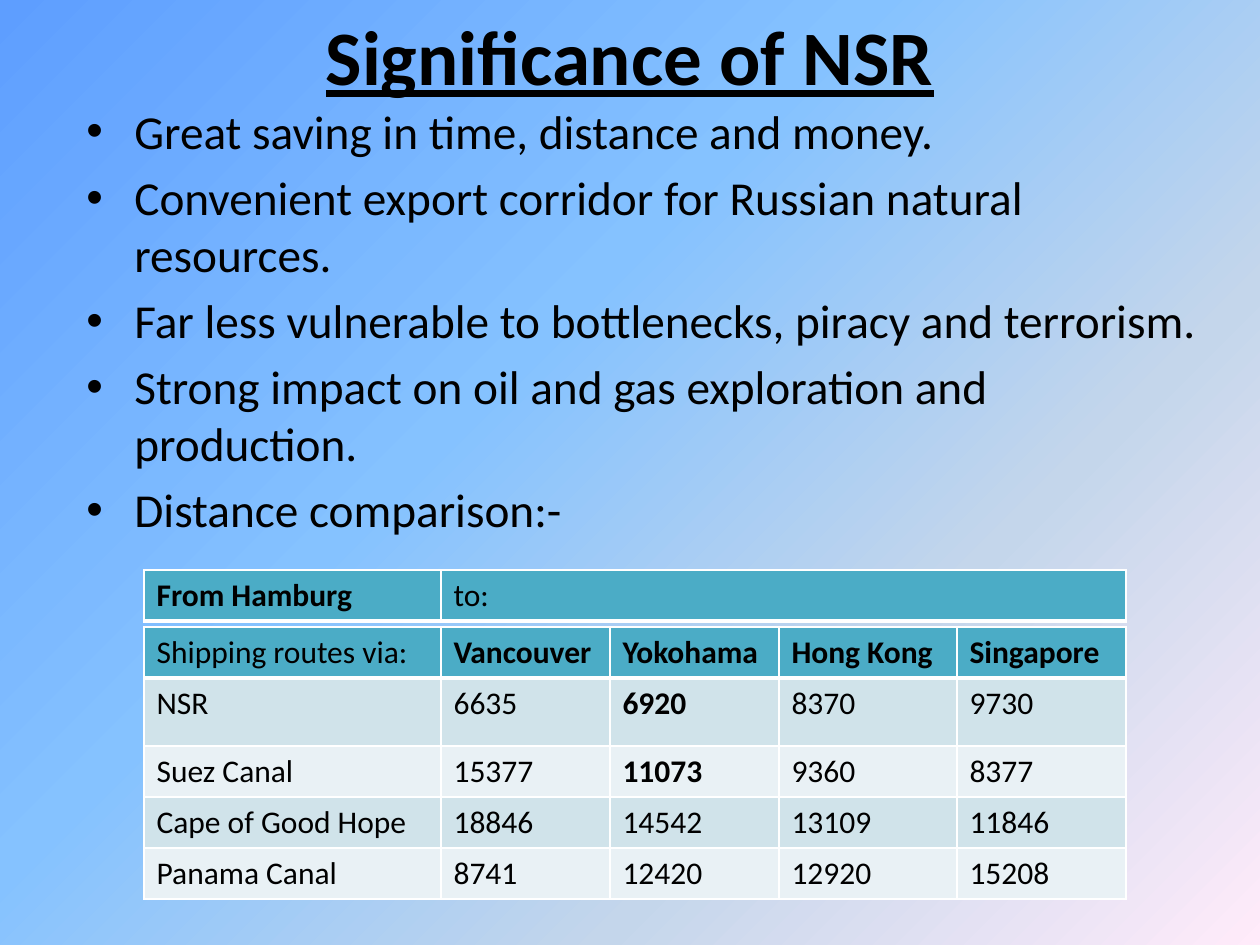
from pptx import Presentation
from pptx.dml.color import RGBColor
from pptx.enum.text import MSO_ANCHOR, PP_ALIGN
from pptx.oxml import parse_xml
from pptx.oxml.ns import nsdecls
from pptx.util import Pt

MIDDLE, TOP = MSO_ANCHOR.MIDDLE, MSO_ANCHOR.TOP
CENTER, LEFT = PP_ALIGN.CENTER, PP_ALIGN.LEFT

TITLE = "Significance of NSR"
POINTS = [
    "Great saving in time, distance and money.",
    "Convenient export corridor for Russian natural resources.",
    "Far less vulnerable to bottlenecks,\u00a0piracy and terrorism.",
    "Strong impact on oil and gas exploration and production.",
    "Distance comparison:-",
]
FROM = [["From Hamburg", "to:"]]
ROUTES = [
    ["Shipping routes via:", "Vancouver", "Yokohama", "Hong Kong", "Singapore"],
    ["NSR", "6635", "6920", "8370", "9730"],
    ["Suez Canal", "15377", "11073", "9360", "8377"],
    ["Cape of Good Hope", "18846", "14542", "13109", "11846"],
    ["Panama Canal", "8741", "12420", "12920", "15208"],
]
STRONG = {"From Hamburg", *ROUTES[0][1:], "6920", "11073"}
STOPS = [(0, "5E9EFF"), (40, "85C2FF"), (70, "C4D6EB"), (100, "FFEBFA")]
HEAD, BANDS = "4BACC6", ("E9F1F5", "D0E3EA")
COLS = [297, 169, 169, 178, 169]
ROWS = [51, 68, 51, 51, 51]
INDENT = 48
FONT = {"name": "Calibri", "bold": False, "underline": False}


def px(n):
    return round(n * 914400 / 126)


def color(code):
    return RGBColor.from_string(code)


def write(para, text, **form):
    run = para.add_run()
    run.text = text
    for key, val in {**FONT, **form}.items():
        setattr(run.font, key, val)
    run.font.color.rgb = color("000000")


def add_box(slide, spot, anchor):
    frame = slide.shapes.add_textbox(*map(px, spot)).text_frame
    frame.word_wrap = True
    frame.vertical_anchor = anchor
    return frame


def add_bullet(para):
    props = para._p.get_or_add_pPr()
    props.set("marL", str(px(INDENT)))
    props.set("indent", str(-px(INDENT)))
    props.append(parse_xml(f'<a:buFont {nsdecls("a")} typeface="Arial"/>'))
    props.append(parse_xml(f'<a:buChar {nsdecls("a")} char="•"/>'))


def add_edges(cell, base):
    props = cell._tc.get_or_add_tcPr()
    for spot, (side, width) in enumerate(zip("LRTB", (1, 1, 1, base))):
        props.insert(spot, parse_xml(
            f'<a:ln{side} {nsdecls("a")} w="{Pt(width)}"><a:solidFill>'
            f'<a:srgbClr val="FFFFFF"/></a:solidFill></a:ln{side}>'))


def add_grid(slide, data, left, top, cols, rows):
    spot = map(px, (left, top, sum(cols), sum(rows)))
    table = slide.shapes.add_table(len(rows), len(cols), *spot).table
    for col, width in zip(table.columns, cols):
        col.width = px(width)
    for r, (row, high) in enumerate(zip(data, rows)):
        table.rows[r].height = px(high)
        for c, text in enumerate(row):
            cell = table.cell(r, c)
            cell.fill.solid()
            cell.fill.fore_color.rgb = color(BANDS[r % 2] if r else HEAD)
            add_edges(cell, 1 if r else 3)
            write(cell.text_frame.paragraphs[0], text, size=Pt(18), bold=text in STRONG)


def set_back(slide):
    stops = "".join(f'<a:gs pos="{pos * 1000}"><a:srgbClr val="{code}"/></a:gs>'
                    for pos, code in STOPS)
    slide._element.cSld.insert(0, parse_xml(
        f'<p:bg {nsdecls("p", "a")}><p:bgPr><a:gradFill rotWithShape="1">'
        f'<a:gsLst>{stops}</a:gsLst><a:lin ang="2700000" scaled="0"/>'
        '</a:gradFill><a:effectLst/></p:bgPr></p:bg>'))


def main():
    deck = Presentation()
    deck.slide_width, deck.slide_height = px(1260), px(945)
    slide = deck.slides.add_slide(deck.slide_layouts[6])
    set_back(slide)

    para = add_box(slide, (63, -24, 1134, 158), MIDDLE).paragraphs[0]
    para.alignment = CENTER
    write(para, TITLE, size=Pt(44), bold=True, underline=True)

    body = add_box(slide, (74, 96, 1135, 679), TOP)
    for i, text in enumerate(POINTS):
        para = body.add_paragraph() if i else body.paragraphs[0]
        para.alignment = LEFT
        para.space_before = Pt(5.4)
        add_bullet(para)
        write(para, text, size=Pt(27))

    add_grid(slide, ROUTES, 144, 627, COLS, ROWS)
    add_grid(slide, FROM, 144, 570, [COLS[0], sum(COLS[1:])], ROWS[:1])
    deck.save("out.pptx")


if __name__ == "__main__":
    main()
